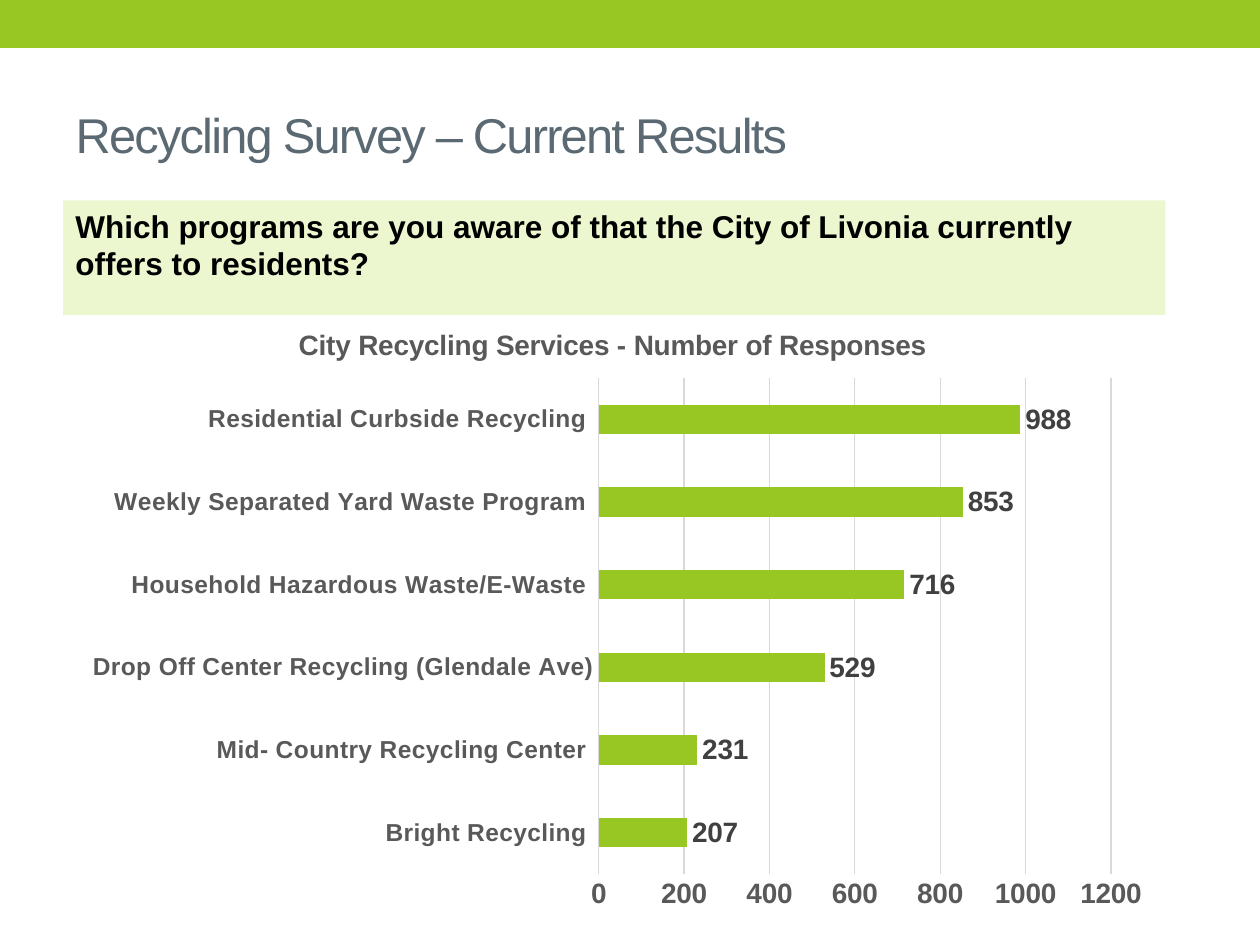
"""Build the recycling survey results slide."""
from dataclasses import dataclass

from lxml import etree
from pptx import Presentation
from pptx import util as u
from pptx.chart.data import CategoryChartData
from pptx.dml.color import RGBColor
from pptx.enum import chart as ch
from pptx.enum import shapes, text
from pptx.oxml import parse_xml
from pptx.oxml.ns import nsdecls, qn

FONT = "Arial"
COLORS = {"green": "98C723", "pale": "ECF7D0", "title": "5B6973", "black": "000000",
          "label": "595959", "value": "404040", "grid": "D9D9D9"}
RESPONSES = [("Bright Recycling ", 207), ("Mid- Country Recycling Center ", 231),
             ("Drop Off Center Recycling (Glendale Ave)", 529),
             ("Household Hazardous Waste/E-Waste ", 716),
             ("Weekly Separated Yard Waste Program ", 853),
             ("Residential Curbside Recycling ", 988)]
QUESTION = ["Which programs are you aware of that the City of Livonia currently",
            "offers to residents?"]


@dataclass
class Block:
    x: float
    y: float
    w: float
    h: float
    fill: str
    outlined: bool = False


HEADER = [Block(-0.01, -0.02, 10.02, 0.4, "green"),
          Block(4.17, 0.08, 0.2, 0.3, "green", True)]
PANEL = Block(0.5, 1.59, 8.75, 0.91, "pale")


def rgb(name: str) -> RGBColor:
    return RGBColor.from_string(COLORS[name])


def style(font, size: float, color: str, bold: bool = True) -> None:
    font.name, font.size, font.bold = FONT, u.Pt(size), bold
    font.color.rgb = rgb(color)


def draw_block(s, b: Block):
    sp = s.shapes.add_shape(shapes.MSO_SHAPE.RECTANGLE, u.Inches(b.x), u.Inches(b.y),
                            u.Inches(b.w), u.Inches(b.h))
    sp.shadow.inherit = False
    sp.fill.solid()
    sp.fill.fore_color.rgb = rgb(b.fill)
    if b.outlined:
        sp.line.color.rgb = rgb(b.fill)
        sp.line.width = u.Pt(0.75)
    else:
        sp.line.fill.background()
    return sp


def add_title(s) -> None:
    sp = s.shapes.title
    sp.left, sp.top, sp.width, sp.height = map(u.Inches, (0.5, 0.52, 9, 1.08))
    tf = sp.text_frame
    tf.auto_size = text.MSO_AUTO_SIZE.NONE
    tf.vertical_anchor = text.MSO_ANCHOR.MIDDLE
    p = tf.paragraphs[0]
    p.alignment = text.PP_ALIGN.LEFT
    r = p.add_run()
    r.text = "Recycling Survey – Current Results"
    style(r.font, 27.9, "title", False)
    r.font._element.set("spc", "-100")


def add_question(s) -> None:
    tf = draw_block(s, PANEL).text_frame
    tf.word_wrap = True
    tf.vertical_anchor = text.MSO_ANCHOR.TOP
    for i, line in enumerate(QUESTION):
        p = tf.add_paragraph() if i else tf.paragraphs[0]
        p.alignment = text.PP_ALIGN.LEFT
        r = p.add_run()
        r.text = line
        style(r.font, 18, "black")


def layout(x: float, y: float, w: float = 0, h: float = 0) -> etree._Element:
    target = '<c:layoutTarget val="inner"/>' if w else ""
    size = f'<c:w val="{w}"/><c:h val="{h}"/>' if w else ""
    return parse_xml(f'<c:layout {nsdecls("c")}><c:manualLayout>{target}'
                     '<c:xMode val="edge"/><c:yMode val="edge"/>'
                     f'<c:x val="{x}"/><c:y val="{y}"/>{size}</c:manualLayout></c:layout>')


def place(parent, element, index: int) -> None:
    for old in parent.findall(qn("c:layout")):
        parent.remove(old)
    parent.insert(index, element)


def style_axis(axis, size: float) -> None:
    axis.major_tick_mark = axis.minor_tick_mark = ch.XL_TICK_MARK.NONE
    style(axis.tick_labels.font, size, "label")


def add_responses(s) -> None:
    data = CategoryChartData()
    data.categories = [name for name, _ in RESPONSES]
    data.add_series("Series 1", [count for _, count in RESPONSES])
    box = map(u.Inches, (0.6, 2.41, 8.65, 4.92))
    chart = s.shapes.add_chart(ch.XL_CHART_TYPE.BAR_CLUSTERED, *box, data).chart
    style(chart.font, 10, "black", False)
    chart.has_legend = False

    chart.has_title = True
    r = chart.chart_title.text_frame.paragraphs[0].add_run()
    r.text = "City Recycling Services - Number of Responses"
    style(r.font, 16, "label")
    place(chart.chart_title._element, layout(0.2, 0.03), 1)
    place(chart._chartSpace.chart.plotArea, layout(0.48, 0.12, 0.47, 0.8), 0)

    cat, val = chart.category_axis, chart.value_axis
    style_axis(cat, 14)
    cat.tick_labels.font._element.set("spc", "10")
    style_axis(val, 16)
    val.minimum_scale, val.maximum_scale, val.major_unit = 0, 1200, 200
    val.format.line.fill.background()
    for line in (cat.format.line, val.major_gridlines.format.line):
        line.color.rgb = rgb("grid")
        line.width = u.Pt(0.75)

    plot = chart.plots[0]
    plot.gap_width = 182
    plot.vary_by_categories = False
    fill = plot.series[0].format.fill
    fill.solid()
    fill.fore_color.rgb = rgb("green")
    plot.has_data_labels = True
    labels = plot.data_labels
    labels.show_value = True
    labels.position = ch.XL_LABEL_POSITION.OUTSIDE_END
    style(labels.font, 16, "value")


def main() -> None:
    prs = Presentation()
    prs.slide_width, prs.slide_height = u.Inches(10), u.Inches(7.5)
    s = prs.slides.add_slide(prs.slide_layouts[5])
    for block in HEADER:
        draw_block(s, block)
    add_title(s)
    add_responses(s)
    add_question(s)
    prs.save("out.pptx")


if __name__ == "__main__":
    main()
